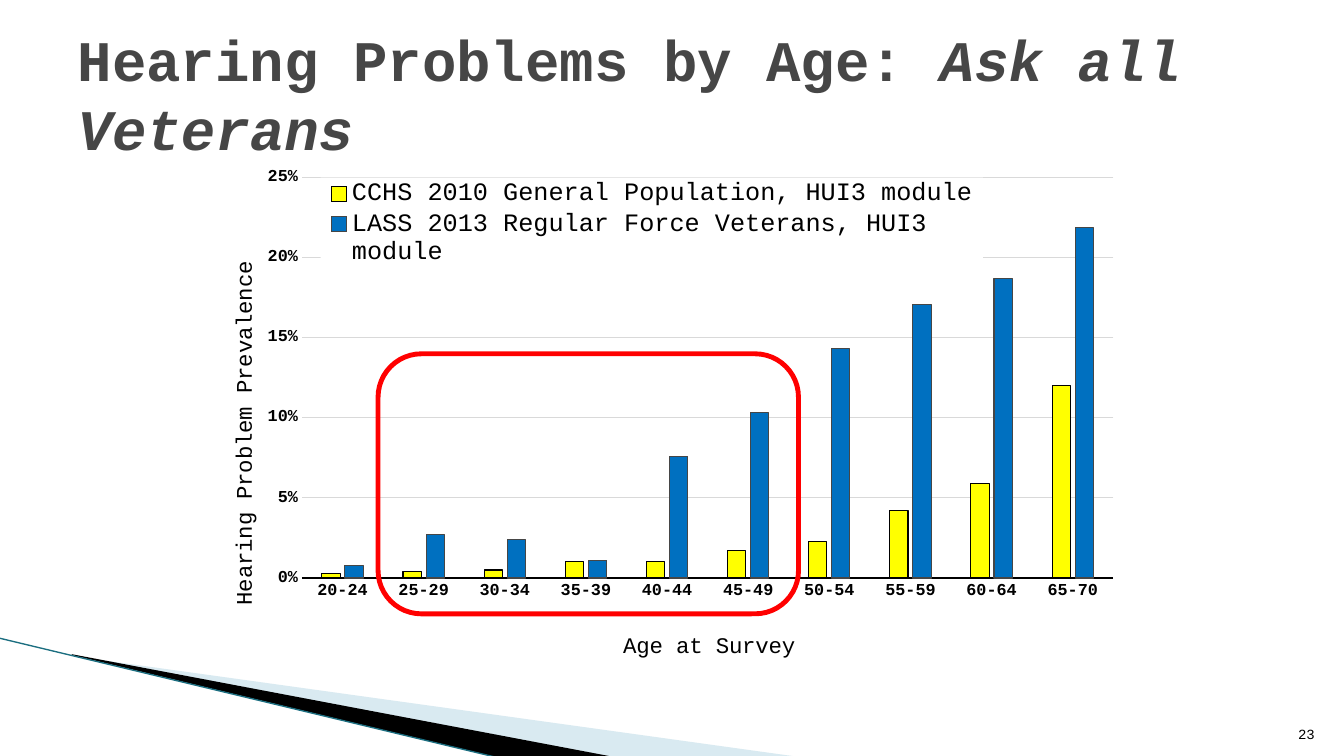
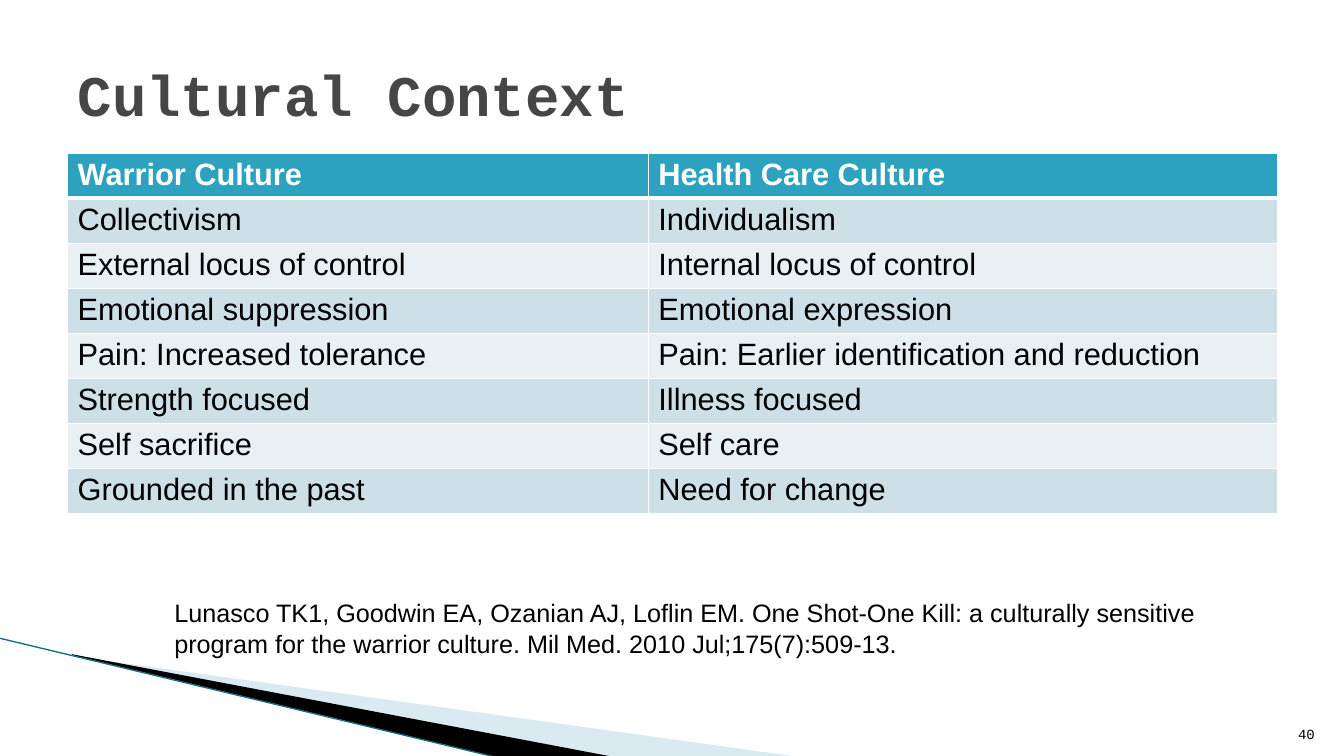
from pptx import Presentation
from pptx.chart.data import CategoryChartData
from pptx.dml.color import RGBColor
from pptx.enum.chart import XL_CHART_TYPE as ChartType, XL_LEGEND_POSITION as LegendPosition
from pptx.enum.chart import XL_TICK_MARK as TickMark
from pptx.enum.shapes import MSO_CONNECTOR as Connector, MSO_SHAPE as Shape
from pptx.enum.text import MSO_ANCHOR as Anchor, MSO_AUTO_SIZE as AutoSize, PP_ALIGN as Align
from pptx.oxml import parse_xml
from pptx.oxml.ns import nsdecls, qn
from pptx.util import Inches, Pt

COLORS = {
    "black": "000000", "white": "FFFFFF", "title": "464646", "pale": "A0CBDC",
    "edge": "1B6E80", "grid": "D9D9D9", "yellow": "FFFF00", "blue": "0070C0",
    "red": "FF0000", "header": "2DA2BF", "odd": "CDE0E8", "even": "E8F0F4",
}
RGB = {name: RGBColor.from_string(value) for name, value in COLORS.items()}
MONO, SANS = "Courier New", "Arial"


def write_text(para, text, size=18, font=MONO, color="black", bold=False, italic=False, align=None):
    span = para.add_run()
    span.text = text
    span.font.size, span.font.name = Pt(size), font
    span.font.bold, span.font.italic = bold, italic
    span.font.color.rgb = RGB[color]
    if align is not None:
        para.alignment = align


def place_chart_part(element, index, target="", **place):
    """Give a chart part a fixed place, in fractions of the chart."""
    for layout in element.findall(qn("c:layout")):
        element.remove(layout)
    modes = "".join(f'<c:{key}Mode val="edge"/>' for key in ("x", "y"))
    values = "".join(f'<c:{key} val="{value}"/>' for key, value in place.items())
    element.insert(index, parse_xml(
        f'<c:layout {nsdecls("c")}><c:manualLayout>{target}{modes}{values}'
        '</c:manualLayout></c:layout>'))


deck = Presentation()
deck.slide_width, deck.slide_height = Inches(13.33), Inches(7.5)
title_only = deck.slide_layouts[5]
for holder in list(title_only.placeholders)[1:]:
    holder.element.getparent().remove(holder.element)

# Both slides: title and page number
titles = [
    ("23", [("Hearing Problems by Age: ", False), ("Ask all Veterans", True)]),
    ("40", [("Cultural Context", False)]),
]
pages = []
for number, parts in titles:
    page = deck.slides.add_slide(title_only)
    pages.append(page)
    title = page.shapes.title
    title.left, title.top = Inches(0.67), Inches(0.3)
    title.width, title.height = Inches(12), Inches(1.25)
    frame = title.text_frame
    frame.auto_size, frame.vertical_anchor = AutoSize.NONE, Anchor.MIDDLE
    for text, italic in parts:
        write_text(frame.paragraphs[0], text, size=41, color="title", bold=True,
                   italic=italic, align=Align.LEFT)
    box = page.shapes.add_textbox(Inches(12.61), Inches(7.01), Inches(0.53), Inches(0.4))
    box.text_frame.vertical_anchor = Anchor.BOTTOM
    box.text_frame.word_wrap = True
    write_text(box.text_frame.paragraphs[0], number, size=10, align=Align.RIGHT)
chart_page, table_page = pages

# Corner wedges, drawn once and moved to the shared layout
wedges = [
    ("pale", [(0.73, 6.51), (7.93, 7.51), (6.08, 7.51), (0.73, 6.5)]),
    ("black", [(0.71, 6.49), (6.09, 7.51), (4.96, 7.52), (0.72, 6.5)]),
]
decorations = []
for color, points in wedges:
    corners = [(Inches(x), Inches(y)) for x, y in points]
    builder = chart_page.shapes.build_freeform(*corners[0], scale=1.0)
    builder.add_line_segments(corners[1:], close=True)
    wedge = builder.convert_to_shape()
    wedge.shadow.inherit = False
    wedge.fill.solid()
    wedge.fill.fore_color.rgb = RGB[color]
    wedge.line.fill.background()
    if color == "pale":
        wedge.element.spPr.find(".//" + qn("a:srgbClr")).append(
            parse_xml(f'<a:alpha {nsdecls("a")} val="40000"/>'))
    decorations.append(wedge)
edge = chart_page.shapes.add_connector(
    Connector.STRAIGHT, Inches(-0.01), Inches(6.33), Inches(4.95), Inches(7.52))
edge.line.color.rgb, edge.line.width = RGB["edge"], Pt(0.95)
edge.element.spPr.append(parse_xml(f'<a:effectLst {nsdecls("a")}/>'))
decorations.append(edge)
for decoration in decorations:
    title_only.shapes._spTree.append(decoration.element)

# Slide 1: chart
data = CategoryChartData(number_format="0.0%")
data.categories = [
    "20-24", "25-29", "30-34", "35-39", "40-44", "45-49", "50-54", "55-59", "60-64", "65-70"]
data.add_series("CCHS 2010 General Population, HUI3 module",
                [0.003, 0.004, 0.005, 0.01, 0.01, 0.017, 0.023, 0.042, 0.059, 0.12])
data.add_series("LASS 2013 Regular Force Veterans, HUI3 module",
                [0.008, 0.027, 0.024, 0.011, 0.076, 0.103, 0.143, 0.171, 0.187, 0.219])
chart = chart_page.shapes.add_chart(
    ChartType.COLUMN_CLUSTERED, Inches(2.07), Inches(1.56), Inches(9.25), Inches(5.05), data).chart
chart.has_title = False
chart.font.name, chart.font.size = MONO, Pt(10)
chart.font.color.rgb = RGB["black"]
place_chart_part(chart._chartSpace.chart.plotArea, 0, '<c:layoutTarget val="inner"/>',
                 x=0.1, y=0.04, w=0.87, h=0.79)

plot = chart.plots[0]
plot.gap_width, plot.overlap, plot.vary_by_categories = 219, -27, False
for series, (fill, line) in zip(plot.series, [("yellow", "black"), ("blue", "title")]):
    series.format.fill.solid()
    series.format.fill.fore_color.rgb = RGB[fill]
    series.format.line.color.rgb, series.format.line.width = RGB[line], Pt(0.75)

# Axes
axes = [
    (chart.category_axis, "Age at Survey", {"x": 0.44, "y": 0.93}),
    (chart.value_axis, "Hearing Problem Prevalence", {"x": 0.02, "y": 0.2}),
]
for axis, text, place in axes:
    axis.major_tick_mark = axis.minor_tick_mark = TickMark.NONE
    font = axis.tick_labels.font
    font.size, font.name, font.bold = Pt(12), MONO, True
    font.color.rgb = RGB["black"]
    write_text(axis.axis_title.text_frame.paragraphs[0], text, size=16)
    place_chart_part(axis.axis_title._element, 1, **place)
chart.category_axis.format.line.color.rgb = RGB["black"]
chart.category_axis.format.line.width = Pt(0.75)
values = chart.value_axis
values.minimum_scale, values.maximum_scale, values.major_unit = 0, 0.25, 0.05
values.tick_labels.number_format, values.tick_labels.number_format_is_linked = "0%", False
values.format.line.fill.background()
values.major_gridlines.format.line.color.rgb = RGB["grid"]
values.major_gridlines.format.line.width = Pt(0.75)

# Legend on white over the plot
chart.has_legend = True
legend = chart.legend
legend.position, legend.include_in_layout = LegendPosition.BOTTOM, False
legend.font.size, legend.font.name = Pt(18), MONO
legend.font.color.rgb = RGB["black"]
place_chart_part(legend._element, 1, x=0.12, y=0.04, w=0.71, h=0.18)
legend._element.find(qn("c:txPr")).addprevious(parse_xml(
    f'<c:spPr {nsdecls("c", "a")}><a:solidFill><a:srgbClr val="{COLORS["white"]}"/>'
    '</a:solidFill></c:spPr>'))

# Frame around the younger age groups
highlight = chart_page.shapes.add_shape(
    Shape.ROUNDED_RECTANGLE, Inches(3.75), Inches(3.51), Inches(4.17), Inches(2.58))
highlight.shadow.inherit = False
highlight.fill.background()
highlight.line.color.rgb, highlight.line.width = RGB["red"], Pt(3.5)

# Slide 2: table
rows = [
    ("Warrior Culture", "Health Care Culture"),
    ("Collectivism", "Individualism"),
    ("External locus of control", "Internal locus of control"),
    ("Emotional suppression", "Emotional expression"),
    ("Pain: Increased tolerance", "Pain: Earlier identification and reduction"),
    ("Strength focused", "Illness focused"),
    ("Self sacrifice", "Self care"),
    ("Grounded in the past", "Need for change"),
]
row_height = Inches(0.44)
table = table_page.shapes.add_table(
    len(rows), 2, Inches(0.67), Inches(1.52), Inches(12), row_height * len(rows)).table
for column, width in zip(table.columns, (5.76, 6.24)):
    column.width = Inches(width)
for row_index, row in enumerate(rows):
    is_header = row_index == 0
    fill = "header" if is_header else ("odd" if row_index % 2 else "even")
    table.rows[row_index].height = row_height
    for column_index, text in enumerate(row):
        cell = table.cell(row_index, column_index)
        cell.margin_top = cell.margin_bottom = Inches(0.04)
        cell.fill.solid()
        cell.fill.fore_color.rgb = RGB[fill]
        write_text(cell.text_frame.paragraphs[0], text, size=22, font=SANS,
                   color="white" if is_header else "black", bold=is_header)
        for position, side in enumerate("LRTB"):
            thick = (is_header and side == "B") or (row_index == 1 and side == "T")
            cell._tc.get_or_add_tcPr().insert(position, parse_xml(
                f'<a:ln{side} {nsdecls("a")} w="{Pt(3 if thick else 1)}"><a:solidFill>'
                f'<a:srgbClr val="{COLORS["white"]}"/></a:solidFill></a:ln{side}>'))

# Reference
box = table_page.shapes.add_textbox(Inches(1.63), Inches(5.88), Inches(10.55), Inches(0.7))
box.text_frame.word_wrap = True
write_text(box.text_frame.paragraphs[0],
           "Lunasco TK1, Goodwin EA, Ozanian AJ, Loflin EM. One Shot-One Kill: a culturally "
           "sensitive program for the warrior culture. Mil Med. 2010 Jul;175(7):509-13.",
           font=SANS)

deck.save("out.pptx")
